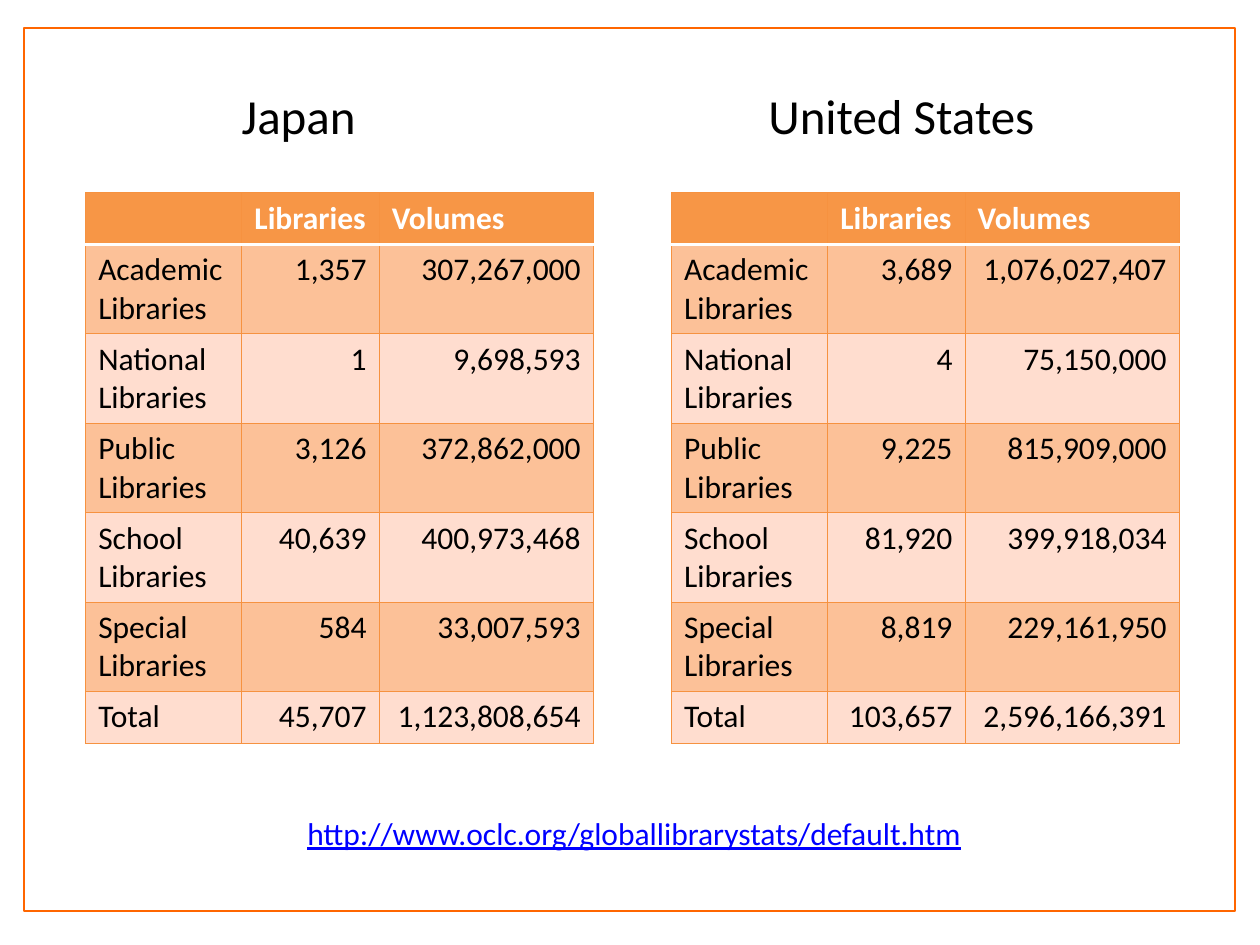
"""Build a slide comparing library statistics for Japan and the United States."""
from dataclasses import dataclass

from lxml import etree
from pptx import Presentation
from pptx.dml.color import RGBColor
from pptx.enum.shapes import MSO_SHAPE
from pptx.enum.text import MSO_ANCHOR, PP_ALIGN
from pptx.oxml.ns import qn
from pptx.util import Inches, Pt

RECTANGLE = MSO_SHAPE.RECTANGLE
LEFT, RIGHT = PP_ALIGN.LEFT, PP_ALIGN.RIGHT
TOP, MIDDLE = MSO_ANCHOR.TOP, MSO_ANCHOR.MIDDLE


@dataclass(frozen=True)
class Theme:
    font: str = "Calibri"
    heading_size: float = 28
    body_size: float = 18
    text: str = "000000"
    white: str = "FFFFFF"
    link: str = "0000FF"
    frame: str = "FF6600"
    header: str = "F79646"
    dark_band: str = "FCC198"
    light_band: str = "FFDDCF"
    grid: str = "F69240"
    grid_width: float = 0.75
    rule_width: float = 2


@dataclass(frozen=True)
class Country:
    name: str
    name_left: float
    name_width: float
    table_left: float
    figures: tuple[tuple[str, str], ...]


THEME = Theme()
HEADINGS = ("", "Libraries", "Volumes")
CATEGORIES = ("Academic Libraries", "National Libraries", "Public Libraries",
              "School Libraries", "Special Libraries", "Total")
COLUMN_WIDTHS = (1.24, 1.09, 1.7)
ROW_HEIGHTS = (0.41, *[0.71] * 5, 0.41)
TABLE_TOP = 1.53
COUNTRIES = (
    Country("Japan", 1.82, 1.41, 0.68, (
        ("1,357", "307,267,000"), ("1", "9,698,593"), ("3,126", "372,862,000"),
        ("40,639", "400,973,468"), ("584", "33,007,593"), ("45,707", "1,123,808,654"))),
    Country("United States", 6, 2.55, 5.33, (
        ("3,689", "1,076,027,407"), ("4", "75,150,000"), ("9,225", "815,909,000"),
        ("81,920", "399,918,034"), ("8,819", "229,161,950"), ("103,657", "2,596,166,391"))),
)


def add_run(paragraph, text: str, size: float, color: str,
            bold: bool = False, underline: bool = False) -> None:
    run = paragraph.add_run()
    run.text = text
    font = run.font
    font.name, font.size = THEME.font, Pt(size)
    font.bold, font.underline = bold, underline
    font.color.rgb = RGBColor.from_string(color)


def add_label(slide, text: str, left: float, top: float, width: float, height: float,
              size: float, color: str, underline: bool = False) -> None:
    label = slide.shapes.add_textbox(Inches(left), Inches(top), Inches(width), Inches(height))
    label.text_frame.word_wrap = True
    add_run(label.text_frame.paragraphs[0], text, size, color, underline=underline)


def add_border(cell, side: str, color: str, width: float) -> None:
    properties = cell._tc.get_or_add_tcPr()
    line = etree.SubElement(properties, qn(f"a:ln{side}"), w=str(Pt(width)))
    fill = etree.SubElement(line, qn("a:solidFill"))
    etree.SubElement(fill, qn("a:srgbClr"), val=color)


def style_cell(cell, row: int, column: int, text: str) -> None:
    is_header = row == 0
    ruled_side = {0: "B", 1: "T"}.get(row)
    for side in "LRTB":
        if side == ruled_side:
            add_border(cell, side, THEME.white, THEME.rule_width)
        else:
            add_border(cell, side, THEME.grid, THEME.grid_width)
    band = THEME.dark_band if row % 2 else THEME.light_band
    cell.fill.solid()
    cell.fill.fore_color.rgb = RGBColor.from_string(THEME.header if is_header else band)
    cell.vertical_anchor = MIDDLE if is_header else TOP
    paragraph = cell.text_frame.paragraphs[0]
    paragraph.alignment = LEFT if is_header or column == 0 else RIGHT
    if text:
        add_run(paragraph, text, THEME.body_size,
                THEME.white if is_header else THEME.text, bold=is_header)


def add_statistics(slide, country: Country) -> None:
    add_label(slide, country.name, country.name_left, 0.63, country.name_width, 0.57,
              THEME.heading_size, THEME.text)
    rows = [HEADINGS, *((category, *pair)
                        for category, pair in zip(CATEGORIES, country.figures))]
    table = slide.shapes.add_table(
        len(rows), len(HEADINGS), Inches(country.table_left), Inches(TABLE_TOP),
        Inches(sum(COLUMN_WIDTHS)), Inches(sum(ROW_HEIGHTS))).table
    for column, width in zip(table.columns, COLUMN_WIDTHS):
        column.width = Inches(width)
    for row, height in zip(table.rows, ROW_HEIGHTS):
        row.height = Inches(height)
    for row_index, values in enumerate(rows):
        for column_index, text in enumerate(values):
            style_cell(table.cell(row_index, column_index), row_index, column_index, text)


def add_frame(slide) -> None:
    frame = slide.shapes.add_shape(RECTANGLE, Inches(0.19), Inches(0.22),
                                   Inches(9.61), Inches(7.01))
    frame.shadow.inherit = False
    frame.fill.solid()
    frame.fill.fore_color.rgb = RGBColor.from_string(THEME.white)
    frame.line.color.rgb = RGBColor.from_string(THEME.frame)
    frame.line.width = Pt(1)


def main() -> None:
    presentation = Presentation()
    presentation.slide_width, presentation.slide_height = Inches(10), Inches(7.5)
    slide = presentation.slides.add_slide(presentation.slide_layouts[6])
    add_frame(slide)
    for country in COUNTRIES:
        add_statistics(slide, country)
    add_label(slide, "http://www.oclc.org/globallibrarystats/default.htm",
              2.34, 6.41, 6.65, 0.4, THEME.body_size, THEME.link, underline=True)
    presentation.save("out.pptx")


if __name__ == "__main__":
    main()
